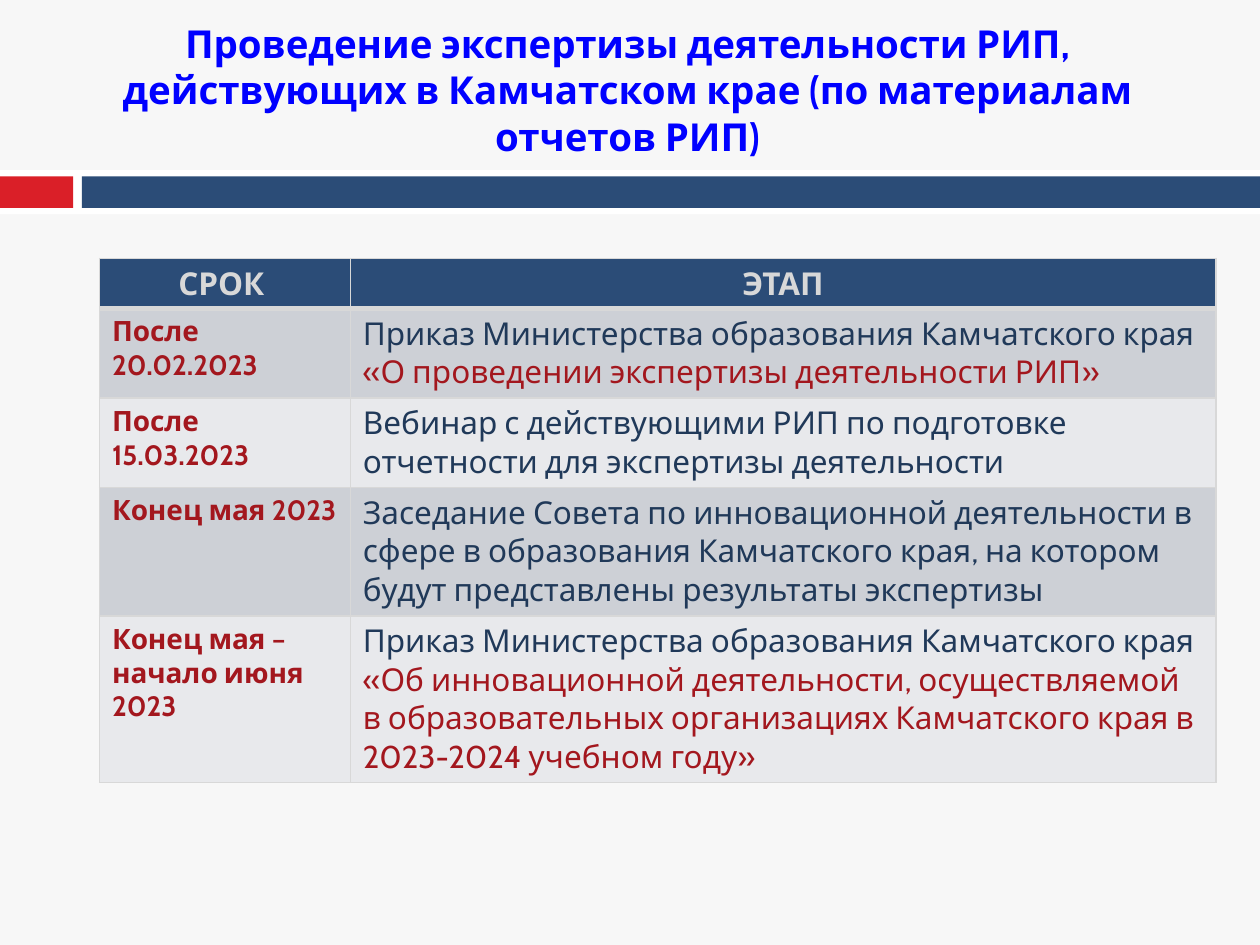
from dataclasses import dataclass

from lxml import etree
from pptx import Presentation
from pptx.dml.color import RGBColor
from pptx.enum.shapes import MSO_SHAPE
from pptx.enum.text import MSO_ANCHOR, PP_ALIGN
from pptx.oxml.ns import qn
from pptx.util import Inches, Pt

RECTANGLE = MSO_SHAPE.RECTANGLE
MIDDLE = MSO_ANCHOR.MIDDLE
CENTER, LEFT = PP_ALIGN.CENTER, PP_ALIGN.LEFT
FONT = "Cabin"
COLORS = {
    "background": "F7F7F7", "white": "FFFFFF", "red": "DA1F28", "navy": "2B4C77",
    "title": "0000FF", "border": "D8D8D8", "dark_red": "A3171E", "text": "203959",
    "odd_row": "CDD0D6", "even_row": "E8E9EC",
}


@dataclass
class Band:
    left: float
    top: float
    width: float
    height: float
    color: str


@dataclass
class Style:
    size: int
    color: str
    bold: bool = False
    align: PP_ALIGN = LEFT


@dataclass
class Stage:
    term: str
    action: str
    height: float
    order_name: str = ""


TITLE_STYLE = Style(22, "title", True, CENTER)
HEADER_STYLE = Style(18, "border", True, CENTER)
TERM_STYLE = Style(16, "dark_red", True)
ACTION_STYLE = Style(18, "text")
ORDER_STYLE = Style(18, "dark_red")

TITLE = ("Проведение экспертизы деятельности РИП, действующих в Камчатском крае "
         "(по материалам отчетов РИП)")
HEADERS = ("СРОК ", "ЭТАП")
HEADER_HEIGHT = 0.4
COLUMN_WIDTHS = (1.99, 6.87)
BANDS = [
    Band(0, 1.35, 10, 0.35, "white"),
    Band(0, 1.4, 0.58, 0.25, "red"),
    Band(0.65, 1.4, 9.35, 0.25, "navy"),
]
MINISTRY_ORDER = "Приказ Министерства образования Камчатского края"
STAGES = [
    Stage("После 20.02.2023", MINISTRY_ORDER, 0.71,
          "«О проведении экспертизы деятельности РИП»"),
    Stage("После 15.03.2023",
          "Вебинар с действующими РИП по подготовке отчетности для экспертизы деятельности",
          0.71),
    Stage("Конец мая 2023",
          "Заседание Совета по инновационной деятельности в сфере в образования "
          "Камчатского края, на котором будут представлены результаты экспертизы", 1.02),
    Stage("Конец мая – начало июня 2023", MINISTRY_ORDER, 1.32,
          "«Об инновационной деятельности, осуществляемой в образовательных "
          "организациях Камчатского края в 2023-2024 учебном году»"),
]


def rgb(name: str) -> RGBColor:
    return RGBColor.from_string(COLORS[name])


def write_paragraph(paragraph, text: str, style: Style) -> None:
    paragraph.alignment = style.align
    run = paragraph.add_run()
    run.text = text
    run.font.name = FONT
    run.font.size = Pt(style.size)
    run.font.bold = style.bold
    run.font.color.rgb = rgb(style.color)


def draw_band(slide, band: Band) -> None:
    shape = slide.shapes.add_shape(
        RECTANGLE, Inches(band.left), Inches(band.top),
        Inches(band.width), Inches(band.height))
    shape.shadow.inherit = False
    shape.fill.solid()
    shape.fill.fore_color.rgb = rgb(band.color)
    shape.line.fill.background()


def draw_title(slide) -> None:
    box = slide.shapes.add_textbox(Inches(0.52), Inches(0.17), Inches(8.92), Inches(1.08))
    frame = box.text_frame
    frame.word_wrap = True
    frame.vertical_anchor = MIDDLE
    write_paragraph(frame.paragraphs[0], TITLE, TITLE_STYLE)


def set_borders(cell, top: int = 1, bottom: int = 1) -> None:
    properties = cell._tc.get_or_add_tcPr()
    widths = {"a:lnL": 1, "a:lnR": 1, "a:lnT": top, "a:lnB": bottom}
    # Border lines must come before the cell fill
    for position, (tag, width) in enumerate(widths.items()):
        line = etree.Element(qn(tag), w=str(Pt(width)))
        fill = etree.SubElement(line, qn("a:solidFill"))
        etree.SubElement(fill, qn("a:srgbClr"), val=COLORS["border"])
        properties.insert(position, line)


def fill_cell(cell, color: str, lines: list[tuple[str, Style]],
              top: int = 1, bottom: int = 1) -> None:
    cell.fill.solid()
    cell.fill.fore_color.rgb = rgb(color)
    set_borders(cell, top, bottom)
    frame = cell.text_frame
    for index, (text, style) in enumerate(lines):
        paragraph = frame.add_paragraph() if index else frame.paragraphs[0]
        write_paragraph(paragraph, text, style)


def draw_table(slide) -> None:
    heights = [HEADER_HEIGHT] + [stage.height for stage in STAGES]
    table = slide.shapes.add_table(
        len(heights), len(COLUMN_WIDTHS), Inches(0.79), Inches(2.05),
        Inches(sum(COLUMN_WIDTHS)), Inches(sum(heights))).table
    for column, width in zip(table.columns, COLUMN_WIDTHS):
        column.width = Inches(width)
    for row, height in zip(table.rows, heights):
        row.height = Inches(height)

    # Header row
    for column_index, header in enumerate(HEADERS):
        fill_cell(table.cell(0, column_index), "navy", [(header, HEADER_STYLE)], bottom=3)

    # Stage rows
    for row_index, stage in enumerate(STAGES, start=1):
        color = "odd_row" if row_index % 2 else "even_row"
        top = 3 if row_index == 1 else 1
        lines = [(stage.action, ACTION_STYLE)]
        if stage.order_name:
            lines.append((stage.order_name, ORDER_STYLE))
        fill_cell(table.cell(row_index, 0), color, [(stage.term, TERM_STYLE)], top)
        fill_cell(table.cell(row_index, 1), color, lines, top)


def main() -> None:
    presentation = Presentation()
    presentation.slide_width = Inches(10)
    presentation.slide_height = Inches(7.5)
    slide = presentation.slides.add_slide(presentation.slide_layouts[6])
    slide.background.fill.solid()
    slide.background.fill.fore_color.rgb = rgb("background")

    # Stripe under the title
    for band in BANDS:
        draw_band(slide, band)
    draw_title(slide)
    draw_table(slide)
    presentation.save("out.pptx")


if __name__ == "__main__":
    main()
